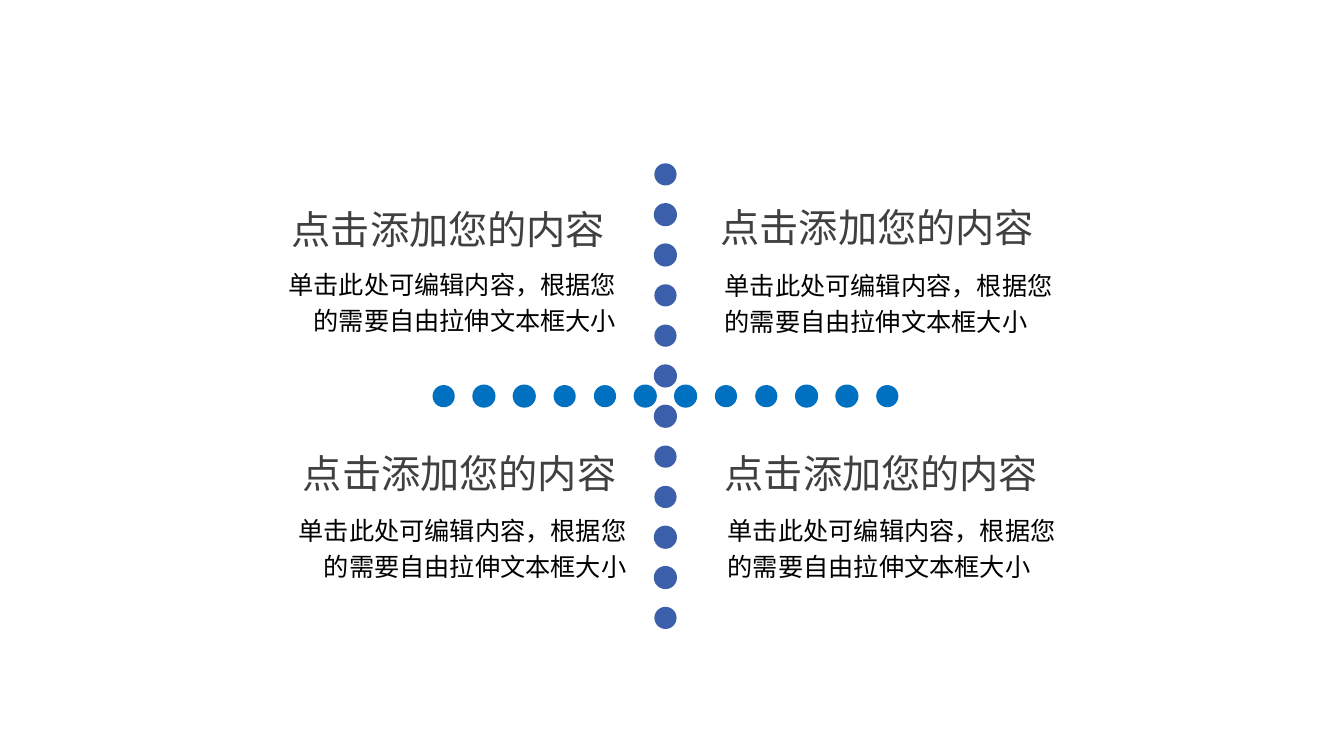
"""Build a slide with four captions around a cross of dots."""
from dataclasses import dataclass

from pptx import Presentation
from pptx.dml.color import RGBColor
from pptx.enum.shapes import MSO_SHAPE
from pptx.enum.text import MSO_AUTO_SIZE, PP_ALIGN
from pptx.util import Emu, Pt

EMU_PER_PX = 9144
COLOURS = {"vertical": "3B5FAB", "horizontal": "0070C0", "title": "404040", "body": "000000"}
TITLE = "点击添加您的内容"
BODY = "单击此处可编辑内容，根据您的需要自由拉伸文本框大小"
DOT_COUNT = 12
DOT_STEP = 40
DOT_DIAMETERS = (22, 23, 23, 22)


@dataclass(frozen=True)
class DotLine:
    colour: str
    x: int
    y: int
    step_x: int
    step_y: int


@dataclass(frozen=True)
class TextStyle:
    colour: str
    height: int
    wrap: bool
    font: dict
    paragraph: dict


@dataclass(frozen=True)
class Caption:
    text: str
    style: TextStyle
    left: int
    top: int
    width: int
    align: PP_ALIGN


TITLE_STYLE = TextStyle("title", 57, False, {"name": "Roboto Condensed", "size": Pt(28)}, {})
BODY_STYLE = TextStyle("body", 83, True, {"name": "Arial", "size": Pt(18)},
                       {"line_spacing": 1.2, "space_before": Pt(3.6)})
DOT_LINES = (
    DotLine("vertical", 660, 173, 0, DOT_STEP),
    DotLine("horizontal", 440, 393, DOT_STEP, 0),
)
CAPTIONS = (
    Caption(TITLE, TITLE_STYLE, 276, 199, 334, PP_ALIGN.RIGHT),
    Caption(BODY, BODY_STYLE, 261, 256, 360, PP_ALIGN.RIGHT),
    Caption(TITLE, TITLE_STYLE, 705, 197, 334, PP_ALIGN.LEFT),
    Caption(BODY, BODY_STYLE, 709, 257, 364, PP_ALIGN.LEFT),
    Caption(TITLE, TITLE_STYLE, 709, 441, 334, PP_ALIGN.LEFT),
    Caption(BODY, BODY_STYLE, 712, 500, 356, PP_ALIGN.LEFT),
    Caption(TITLE, TITLE_STYLE, 287, 441, 334, PP_ALIGN.RIGHT),
    Caption(BODY, BODY_STYLE, 269, 500, 362, PP_ALIGN.RIGHT),
)


def px(length: float) -> Emu:
    return Emu(round(length * EMU_PER_PX))


def colour(name: str) -> RGBColor:
    return RGBColor.from_string(COLOURS[name])


def apply_format(target: object, values: dict) -> None:
    for name, value in values.items():
        setattr(target, name, value)


def draw_dots(shapes, line: DotLine) -> None:
    for index in range(DOT_COUNT):
        diameter = DOT_DIAMETERS[index % len(DOT_DIAMETERS)]
        left = line.x + index * line.step_x - diameter / 2
        top = line.y + index * line.step_y - diameter / 2
        dot = shapes.add_shape(MSO_SHAPE.OVAL, px(left), px(top), px(diameter), px(diameter))
        dot.shadow.inherit = False
        dot.fill.solid()
        dot.fill.fore_color.rgb = colour(line.colour)
        dot.line.fill.background()


def draw_caption(shapes, caption: Caption) -> None:
    style = caption.style
    box = shapes.add_textbox(px(caption.left), px(caption.top), px(caption.width), px(style.height))
    frame = box.text_frame
    apply_format(frame, {"word_wrap": style.wrap, "auto_size": MSO_AUTO_SIZE.SHAPE_TO_FIT_TEXT})
    paragraph = frame.paragraphs[0]
    apply_format(paragraph, {"alignment": caption.align, **style.paragraph})
    run = paragraph.add_run()
    run.text = caption.text
    apply_format(run.font, style.font)
    run.font.color.rgb = colour(style.colour)


def main() -> None:
    presentation = Presentation()
    apply_format(presentation, {"slide_width": px(1333), "slide_height": px(750)})
    slide = presentation.slides.add_slide(presentation.slide_layouts[6])
    for line in DOT_LINES:
        draw_dots(slide.shapes, line)
    for caption in CAPTIONS:
        draw_caption(slide.shapes, caption)
    presentation.save("out.pptx")


if __name__ == "__main__":
    main()
